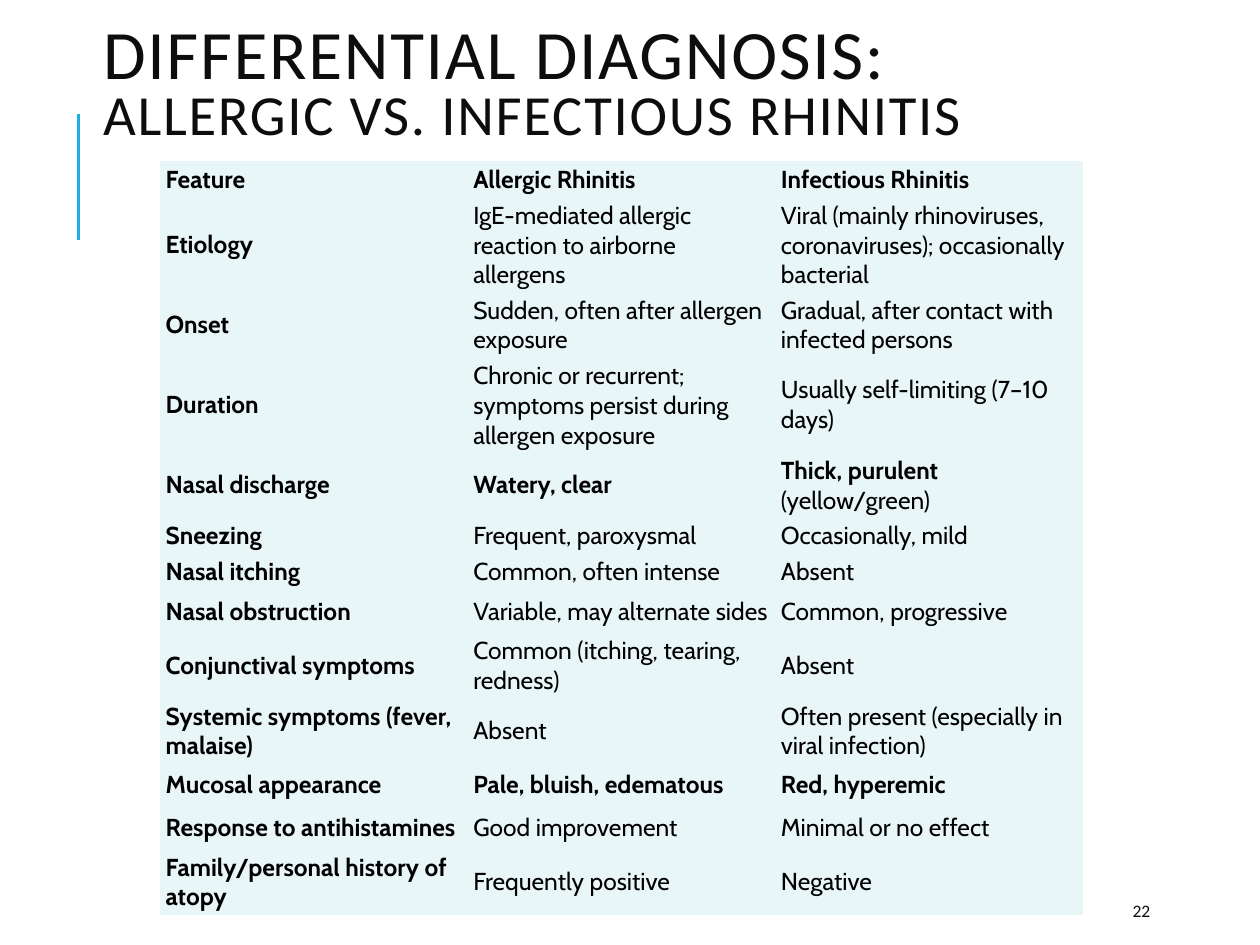
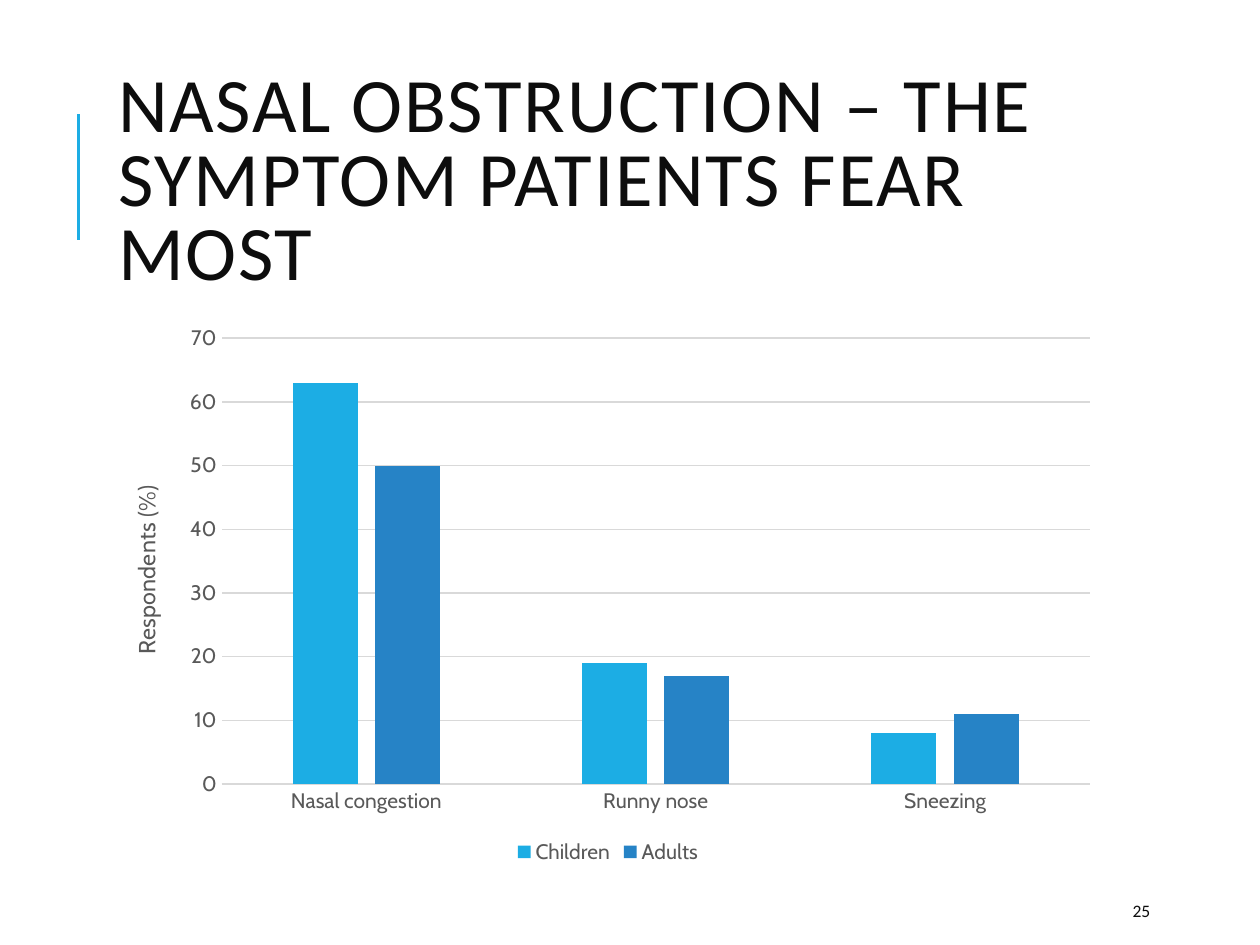
from dataclasses import dataclass
from lxml import etree
from pptx import Presentation
from pptx.chart.data import CategoryChartData
from pptx.dml.color import RGBColor
from pptx.enum.chart import XL_CHART_TYPE, XL_LEGEND_POSITION, XL_TICK_MARK
from pptx.enum.shapes import MSO_CONNECTOR
from pptx.enum.text import MSO_ANCHOR
from pptx.oxml.ns import qn
from pptx.util import Inches, Pt

COLUMN = XL_CHART_TYPE.COLUMN_CLUSTERED
BOTTOM = XL_LEGEND_POSITION.BOTTOM
NO_TICK = XL_TICK_MARK.NONE
STRAIGHT = MSO_CONNECTOR.STRAIGHT
MIDDLE = MSO_ANCHOR.MIDDLE
NO_GRID_STYLE = "{2D5ABB26-0587-4C30-8999-92F81FD0307C}"


@dataclass(frozen=True)
class Theme:
    heading_font: str = "Calibri"
    body_font: str = "Cabin"
    ink: RGBColor = RGBColor.from_string("0D0D0D")
    black: RGBColor = RGBColor.from_string("000000")
    gray: RGBColor = RGBColor.from_string("595959")
    rule: RGBColor = RGBColor.from_string("D9D9D9")
    cell: RGBColor = RGBColor.from_string("E8F6F8")
    accent: RGBColor = RGBColor.from_string("1CADE4")
    accent2: RGBColor = RGBColor.from_string("2683C6")
    title: float = 44
    title_fit: float = 39.6
    subtitle: float = 32.4
    body: float = 14
    axis_title: float = 13.3
    label: float = 12
    number: float = 10


T = Theme()
prs = Presentation()
prs.slide_width, prs.slide_height = Inches(10), Inches(7.5)
U = prs.slide_width // 100


def add_text(slide, box, runs, spacing=None, track=0):
    sp = slide.shapes.add_textbox(*[round(n * U) for n in box])
    tf = sp.text_frame
    tf.word_wrap = True
    tf.vertical_anchor = MIDDLE
    p = tf.paragraphs[0]
    p.line_spacing = spacing
    p.font.name, p.font.color.rgb = T.heading_font, T.ink
    for text, size in runs:
        r = p.add_run()
        r.text, r.font.size = text, Pt(size)
        if track:
            r.font._element.set("spc", str(track))


def set_layout(parent, **shares):
    layout = parent.find(qn("c:layout"))
    if layout is None:
        layout = etree.Element(qn("c:layout"))
        parent.insert(0, layout)
    manual = etree.SubElement(layout, qn("c:manualLayout"))
    if "w" in shares:
        etree.SubElement(manual, qn("c:layoutTarget")).set("val", "inner")
    for axis in "xy":
        etree.SubElement(manual, qn(f"c:{axis}Mode")).set("val", "edge")
    for name, share in shares.items():
        etree.SubElement(manual, qn(f"c:{name}")).set("val", f"{share:.4f}")


pages = [
    ((7.2, 2.4, 82.3, 8.9), "22",
     [("DIFFERENTIAL DIAGNOSIS: ", T.title_fit),
      ("ALLERGIC VS. INFECTIOUS RHINITIS", T.subtitle)]),
    ((8.4, 6.4, 81, 16.4), "25",
     [("NASAL OBSTRUCTION – THE SYMPTOM PATIENTS FEAR MOST", T.title)]),
]
for title_box, number, title_runs in pages:
    slide = prs.slides.add_slide(prs.slide_layouts[6])
    bar = slide.shapes.add_connector(
        STRAIGHT, *[round(n * U) for n in (6.24, 19.05, 6.24, 9.05)])
    bar.line.color.rgb, bar.line.width = T.accent, Pt(1.5)
    etree.SubElement(bar._element.spPr, qn("a:effectLst"))
    add_text(slide, title_box, title_runs, spacing=0.8, track=100)
    add_text(slide, (88.9, 70.8, 8, 3), [(number, T.number)])

table_slide, chart_slide = prs.slides

features = [
    (2.0, "Feature", "Allergic Rhinitis", "Infectious Rhinitis"),
    (6.4, "Etiology", "IgE-mediated allergic reaction to airborne allergens",
     "Viral (mainly rhinoviruses, coronaviruses); occasionally bacterial"),
    (3.4, "Onset", "Sudden, often after allergen exposure",
     "Gradual, after contact with infected persons"),
    (4.9, "Duration",
     "Chronic or recurrent; symptoms persist during allergen exposure",
     "Usually self-limiting (7–10 days)"),
    (3.4, "Nasal discharge", "Watery, clear", "Thick, purulent| (yellow/green)"),
    (2.0, "Sneezing", "Frequent, paroxysmal", "Occasionally, mild"),
    (2.0, "Nasal itching", "Common, often intense", "Absent"),
    (3.4, "Nasal obstruction", "Variable, may alternate sides",
     "Common, progressive"),
    (3.4, "Conjunctival symptoms", "Common (itching, tearing, redness)",
     "Absent"),
    (4.9, "Systemic symptoms (fever, malaise)", "Absent",
     "Often present (especially in viral infection)"),
    (3.4, "Mucosal appearance", "Pale, bluish, edematous", "Red, hyperemic"),
    (3.4, "Response to antihistamines", "Good improvement",
     "Minimal or no effect"),
    (3.4, "Family/personal history of atopy", "Frequently positive", "Negative"),
]
bold_rows = {"Feature", "Nasal discharge", "Mucosal appearance"}

table = table_slide.shapes.add_table(
    len(features), 3, *[round(n * U) for n in (12.7, 12.8, 73.25, 59.3)]).table
table.first_row = table.horz_banding = False
table._tbl.tblPr.find(qn("a:tableStyleId")).text = NO_GRID_STYLE
for row, (height, *texts) in zip(table.rows, features):
    row.height = round(height * U)
    for col, (cell, text) in enumerate(zip(row.cells, texts)):
        cell.fill.solid()
        cell.fill.fore_color.rgb = T.cell
        cell.vertical_anchor = MIDDLE
        cell.margin_left = cell.margin_right = round(0.45 * U)
        cell.margin_top = cell.margin_bottom = round(0.26 * U)
        p = cell.text_frame.paragraphs[0]
        p.font.name, p.font.size = T.body_font, Pt(T.body)
        p.font.color.rgb = T.black
        for part, words in enumerate(text.split("|")):
            r = p.add_run()
            r.text = words
            r.font.bold = part == 0 and (col == 0 or texts[0] in bold_rows)

data = CategoryChartData()
data.categories = ["Nasal congestion", "Runny nose", "Sneezing"]
data.add_series("Children", (63, 19, 8))
data.add_series("Adults", (50, 17, 11))
chart_w, chart_h = 79.7, 44
chart = chart_slide.shapes.add_chart(
    COLUMN, *[round(n * U) for n in (8.4, 25, chart_w, chart_h)], data).chart
chart.has_title = False
chart.font.name, chart.font.size = T.body_font, Pt(T.label)
chart.font.color.rgb = T.gray
chart.has_legend = True
chart.legend.position = BOTTOM
chart.legend.include_in_layout = False

plot = chart.plots[0]
plot.gap_width, plot.overlap, plot.vary_by_categories = 219, -27, False
for series, color in zip(plot.series, (T.accent, T.accent2)):
    series.format.fill.solid()
    series.format.fill.fore_color.rgb = color

cat_axis, val_axis = chart.category_axis, chart.value_axis
for axis in (cat_axis, val_axis):
    axis.major_tick_mark = axis.minor_tick_mark = NO_TICK
for line in (cat_axis.format.line, val_axis.major_gridlines.format.line):
    line.color.rgb, line.width = T.rule, Pt(0.75)
val_axis.format.line.fill.background()
val_axis.minimum_scale, val_axis.maximum_scale, val_axis.major_unit = 0, 70, 10

p = val_axis.axis_title.text_frame.paragraphs[0]
p.text = "Respondents (%)"
p.font.name, p.font.size, p.font.bold = T.body_font, Pt(T.axis_title), False
p.font.color.rgb = T.gray
set_layout(val_axis.axis_title._element, x=1.6 / chart_w, y=13.2 / chart_h)
set_layout(chart._chartSpace.chart.plotArea, x=9.2 / chart_w, y=1.85 / chart_h,
           w=68.9 / chart_w, h=35.4 / chart_h)

prs.save("out.pptx")
